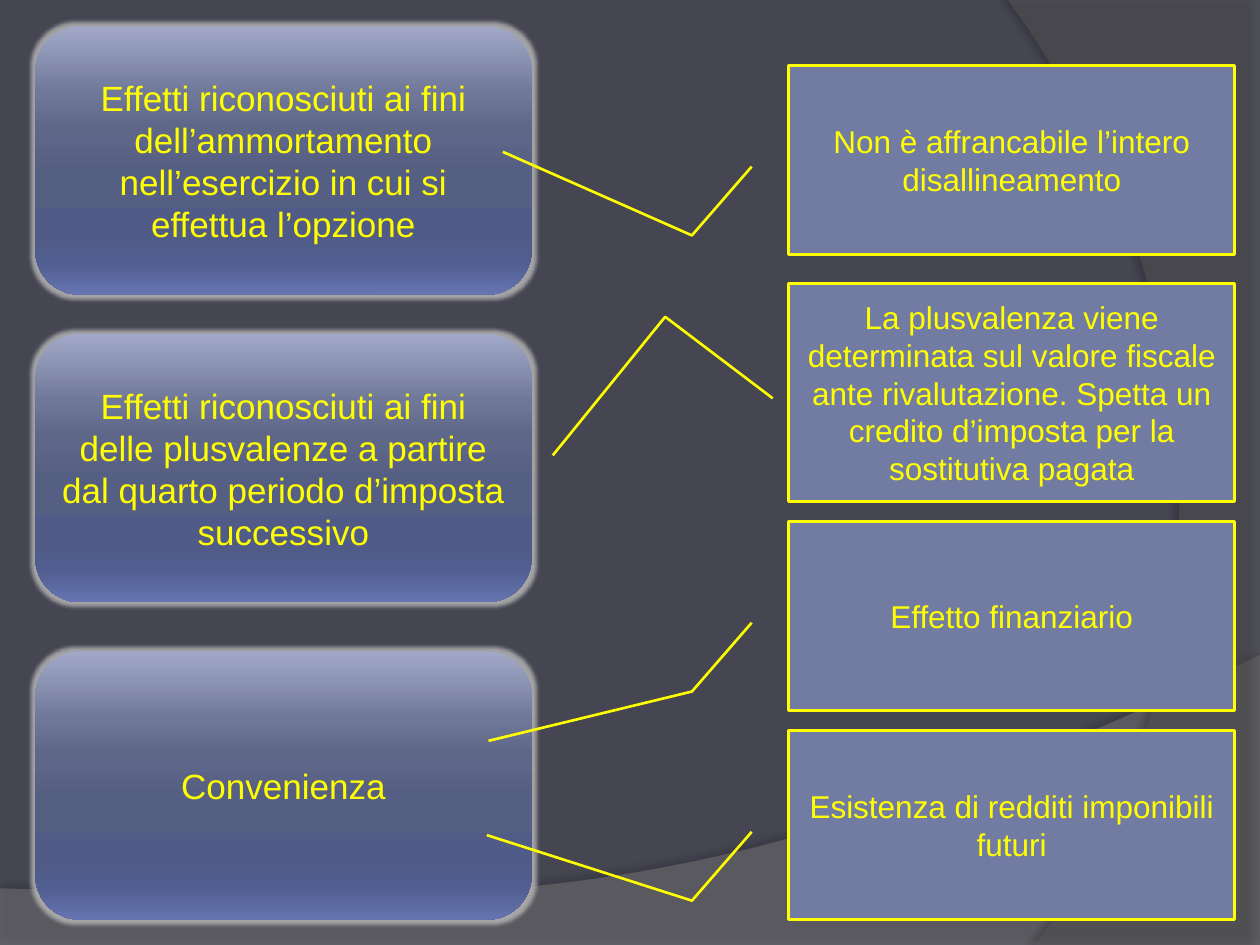
from lxml.etree import SubElement
from pptx import Presentation
from pptx.dml.color import RGBColor
from pptx.enum.shapes import MSO_SHAPE
from pptx.enum.text import MSO_ANCHOR, PP_ALIGN
from pptx.oxml.ns import qn
from pptx.util import Inches, Pt

WIDTH, HEIGHT = 10, 7.5
YELLOW = "FFFF00"
GRADIENT = [(0, "A2A9C8"), (25, "707899"), (38, "5F6789"), (55, "555F83"),
            (80, "505B87"), (88, "515E91"), (100, "6675B1")]
EFFECTS = [
    (0.21, "Effetti riconosciuti ai fini dell’ammortamento nell’esercizio in cui si effettua l’opzione"),
    (2.65, "Effetti riconosciuti ai fini delle plusvalenze a partire dal quarto periodo d’imposta successivo"),
    (5.17, "Convenienza"),
]
CALLOUTS = [
    (0.52, 1.5, (0.535, -0.083, 0.899, -0.217, 0.457, -0.641),
     "Non è affrancabile l’intero disallineamento"),
    (2.25, 1.73, (0.527, -0.036, 0.153, -0.277, 0.789, -0.529),
     "La plusvalenza viene determinata sul valore fiscale ante rivalutazione. "
     "Spetta un credito d’imposta per la sostitutiva pagata"),
    (4.14, 1.5, (0.535, -0.083, 0.899, -0.217, 1.16, -0.673), "Effetto finanziario"),
    (5.8, 1.5, (0.535, -0.083, 0.899, -0.217, 0.552, -0.677),
     "Esistenza di redditi imponibili futuri"),
]


def color(value):
    """Turn a hex string into a colour."""
    return RGBColor.from_string(value)


def add_color(parent, value, opacity=100):
    """Append a colour element with an opacity in percent."""
    element = SubElement(parent, qn("a:srgbClr"), val=value)
    if opacity < 100:
        SubElement(element, qn("a:alpha"), val=str(opacity * 1000))


def add_effect(shape, name, value, opacity, **settings):
    """Give a shape one glow or shadow effect."""
    shape.shadow.inherit = False
    effects = shape._element.spPr.find(qn("a:effectLst"))
    attributes = {key: str(number) for key, number in settings.items()}
    add_color(SubElement(effects, qn(f"a:{name}"), **attributes), value, opacity)


def curve(start, first, second, end, steps=40):
    """Sample the points of a cubic curve."""
    def blend(a, b, c, d, t):
        return a * (1 - t) ** 3 + 3 * b * t * (1 - t) ** 2 + 3 * c * t * t * (1 - t) + d * t ** 3
    return [tuple(blend(*axis, step / steps) for axis in zip(start, first, second, end))
            for step in range(steps + 1)]


def add_wave(page, points, fill, opacity, shadow_opacity, distance, direction):
    """Draw a translucent background wave with a shadow."""
    corners = [(Inches(x), Inches(y)) for x, y in points]
    builder = page.shapes.build_freeform(*corners[0])
    builder.add_line_segments(corners[1:])
    wave = builder.convert_to_shape()
    wave.fill.solid()
    wave.fill.fore_color.rgb = color(fill)
    solid = wave._element.spPr.find(qn("a:solidFill"))
    solid.clear()
    add_color(solid, fill, opacity)
    wave.line.fill.background()
    add_effect(wave, "outerShdw", "000000", shadow_opacity,
               blurRad=Pt(4), dist=Pt(distance), dir=direction * 60000)


def add_box(page, kind, left, top, width, height, text, size):
    """Add a preset shape with centred yellow text."""
    box = page.shapes.add_shape(kind, Inches(left), Inches(top), Inches(width), Inches(height))
    box.shadow.inherit = False
    frame = box.text_frame
    frame.word_wrap = True
    frame.vertical_anchor = MSO_ANCHOR.MIDDLE
    frame.text = text
    para = frame.paragraphs[0]
    para.alignment = PP_ALIGN.CENTER
    font = para.runs[0].font
    font.name, font.size = "Arial", Pt(size)
    font.color.rgb = color(YELLOW)
    return box


def add_effect_box(page, top, text):
    """Add a rounded gradient box with a soft glow."""
    box = add_box(page, MSO_SHAPE.ROUNDED_RECTANGLE, 0.28, top, 3.94, 2.13, text, 20)
    box.fill.gradient()
    box.fill.gradient_angle = 270
    stops = box._element.spPr.find(qn("a:gradFill")).find(qn("a:gsLst"))
    stops.clear()
    for position, value in GRADIENT:
        add_color(SubElement(stops, qn("a:gs"), pos=str(position * 1000)), value)
    box.line.fill.background()
    add_effect(box, "glow", "B4B4B4", 85, rad=Pt(5))


def add_callout(page, top, height, leader, text):
    """Add a bordered callout with a bent leader line."""
    box = add_box(page, MSO_SHAPE.LINE_CALLOUT_2, 6.26, top, 3.54, height, text, 18)
    for index, share in enumerate(leader):
        box.adjustments[index] = share
    box.fill.solid()
    box.fill.fore_color.rgb = color("727CA3")
    box.line.color.rgb = color(YELLOW)
    box.line.width = Pt(1.5)


def main():
    """Build and save the deck."""
    deck = Presentation()
    deck.slide_width, deck.slide_height = Inches(WIDTH), Inches(HEIGHT)
    page = deck.slides.add_slide(deck.slide_layouts[6])
    page.background.fill.solid()
    page.background.fill.fore_color.rgb = color("464653")
    bottom = curve((WIDTH, 5.2), (5.59, 7.29), (3.91, 7.19), (0, 7.05))
    add_wave(page, bottom + [(0, HEIGHT), (WIDTH, HEIGHT)], "7F7F7F", 45, 35, 3.5, 270)
    side = curve((8.21, HEIGHT), (9.35, 6.19), (10.18, 3), (8, 0))
    add_wave(page, side + [(WIDTH, 0), (WIDTH, HEIGHT)], "5E5E5E", 40, 45, 4, 180)
    for effect in EFFECTS:
        add_effect_box(page, *effect)
    for callout in CALLOUTS:
        add_callout(page, *callout)
    deck.save("out.pptx")


if __name__ == "__main__":
    main()
